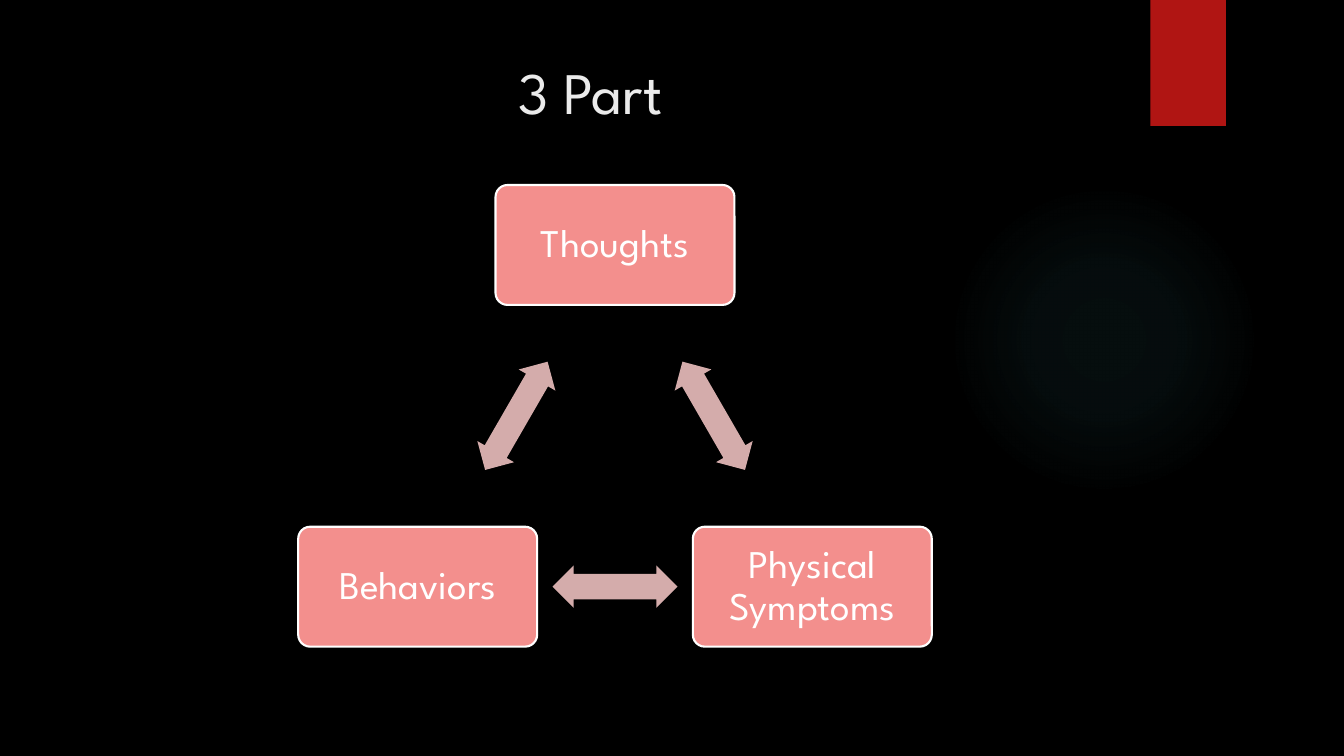
"""Build the three-part cycle slide of thoughts, symptoms and behaviors."""
import math

import pptx
import pptx.dml.color
import pptx.enum.shapes
import pptx.enum.text
import pptx.oxml.ns
import pptx.util
from lxml import etree

RGBColor = pptx.dml.color.RGBColor
SHAPES = pptx.enum.shapes.MSO_SHAPE
ANCHOR = pptx.enum.text.MSO_ANCHOR
BLACK = RGBColor(0x00, 0x00, 0x00)
WHITE = RGBColor(0xFF, 0xFF, 0xFF)
TITLE_GREY = RGBColor(0xEB, 0xEB, 0xEB)
RIBBON_RED = RGBColor(0xB0, 0x15, 0x13)
NODE_PINK = RGBColor(0xF3, 0x8F, 0x8D)
ARROW_PINK = RGBColor(0xD4, 0xAC, 0xAB)
GLOW_TEAL = RGBColor(0x50, 0xB9, 0xC1)

FONT = "League Spartan"
WIDTH, HEIGHT = 13.33, 7.5
CENTRE_X, CENTRE_Y, RADIUS = 6.1, 4.69, 2.26
NODE_SIZE = (2.37, 1.19)
ARROW_SIZE = (1.24, 0.42)
PARTS = ("Thoughts", "Physical Symptoms", "Behaviors")


def add_block(slide, preset, left, top, width, height, colour):
    """Add a flat preset shape with a solid fill and no outline."""
    block = slide.shapes.add_shape(
        preset, *(pptx.util.Inches(length) for length in (left, top, width, height)))
    block.shadow.inherit = False
    block.fill.solid()
    block.fill.fore_color.rgb = colour
    block.line.fill.background()
    return block


def add_centred(slide, preset, centre, size, colour):
    """Add a block placed by its centre point."""
    left, top = (middle - length / 2 for middle, length in zip(centre, size))
    return add_block(slide, preset, left, top, *size, colour)


def write_text(frame, wording, size, colour, inset_x, inset_y, anchor):
    """Write one centred, wrapped paragraph into a text frame."""
    frame.word_wrap = True
    frame.vertical_anchor = anchor
    frame.margin_left = frame.margin_right = pptx.util.Inches(inset_x)
    frame.margin_top = frame.margin_bottom = pptx.util.Inches(inset_y)
    frame.text = wording
    paragraph = frame.paragraphs[0]
    paragraph.alignment = pptx.enum.text.PP_ALIGN.CENTER
    font = paragraph.runs[0].font
    font.name, font.size = FONT, pptx.util.Pt(size)
    font.color.rgb = colour
    return paragraph


def add_glow(slide):
    """Add the faint circular glow that fades outwards."""
    qn = pptx.oxml.ns.qn
    glow = add_block(slide, SHAPES.OVAL, 9.41, 1.83, 3.08, 3.08, GLOW_TEAL)
    properties = glow._element.spPr
    gradient = etree.Element(qn("a:gradFill"), rotWithShape="1")
    stops = etree.SubElement(gradient, qn("a:gsLst"))
    for position, opacity in ((0, 7), (36, 6), (69, 0)):
        stop = etree.SubElement(stops, qn("a:gs"), pos=str(position * 1000))
        colour = etree.SubElement(stop, qn("a:srgbClr"), val=str(GLOW_TEAL))
        etree.SubElement(colour, qn("a:alpha"), val=str(opacity * 1000))
    circle = etree.SubElement(gradient, qn("a:path"), path="circle")
    etree.SubElement(circle, qn("a:fillToRect"),
                     {side: "50000" for side in "ltrb"})
    properties.replace(properties.find(qn("a:solidFill")), gradient)


def add_title(slide, wording):
    """Add the slide title."""
    title = slide.shapes.add_textbox(
        *(pptx.util.Inches(length) for length in (0.71, 0.5, 10.29, 1.53)))
    write_text(title.text_frame, wording, 42, TITLE_GREY, 0.1, 0.05, ANCHOR.TOP)


def cycle_point(degrees, radius):
    """Return the point at a clockwise angle from the top of the cycle."""
    angle = math.radians(degrees)
    return (CENTRE_X + radius * math.sin(angle),
            CENTRE_Y - radius * math.cos(angle))


def add_node(slide, wording, degrees):
    """Add one rounded part of the cycle."""
    node = add_centred(slide, SHAPES.ROUNDED_RECTANGLE,
                       cycle_point(degrees, RADIUS), NODE_SIZE, NODE_PINK)
    node.adjustments[0] = 0.1
    node.line.color.rgb = WHITE
    node.line.width = pptx.util.Pt(1.5)
    paragraph = write_text(node.text_frame, wording, 28, WHITE,
                           0.12, 0.12, ANCHOR.MIDDLE)
    paragraph.line_spacing = 0.9


def add_cycle_arrow(slide, degrees):
    """Add the two-way arrow halfway between neighbouring parts."""
    arrow = add_centred(slide, SHAPES.LEFT_RIGHT_ARROW,
                        cycle_point(degrees, RADIUS / 2), ARROW_SIZE, ARROW_PINK)
    arrow.adjustments[0], arrow.adjustments[1] = 0.6, 0.5
    arrow.rotation = degrees


def main():
    """Build and save the slide."""
    deck = pptx.Presentation()
    deck.slide_width = pptx.util.Inches(WIDTH)
    deck.slide_height = pptx.util.Inches(HEIGHT)
    slide = deck.slides.add_slide(deck.slide_layouts[6])
    slide.background.fill.solid()
    slide.background.fill.fore_color.rgb = BLACK

    add_glow(slide)
    add_block(slide, SHAPES.RECTANGLE, 11.41, 0, 0.75, HEIGHT / 6, RIBBON_RED)
    add_title(slide, "3 Part")
    step = 360 / len(PARTS)
    for index, part in enumerate(PARTS):
        add_node(slide, part, index * step)
        add_cycle_arrow(slide, (index + 0.5) * step)
    deck.save("out.pptx")


if __name__ == "__main__":
    main()
